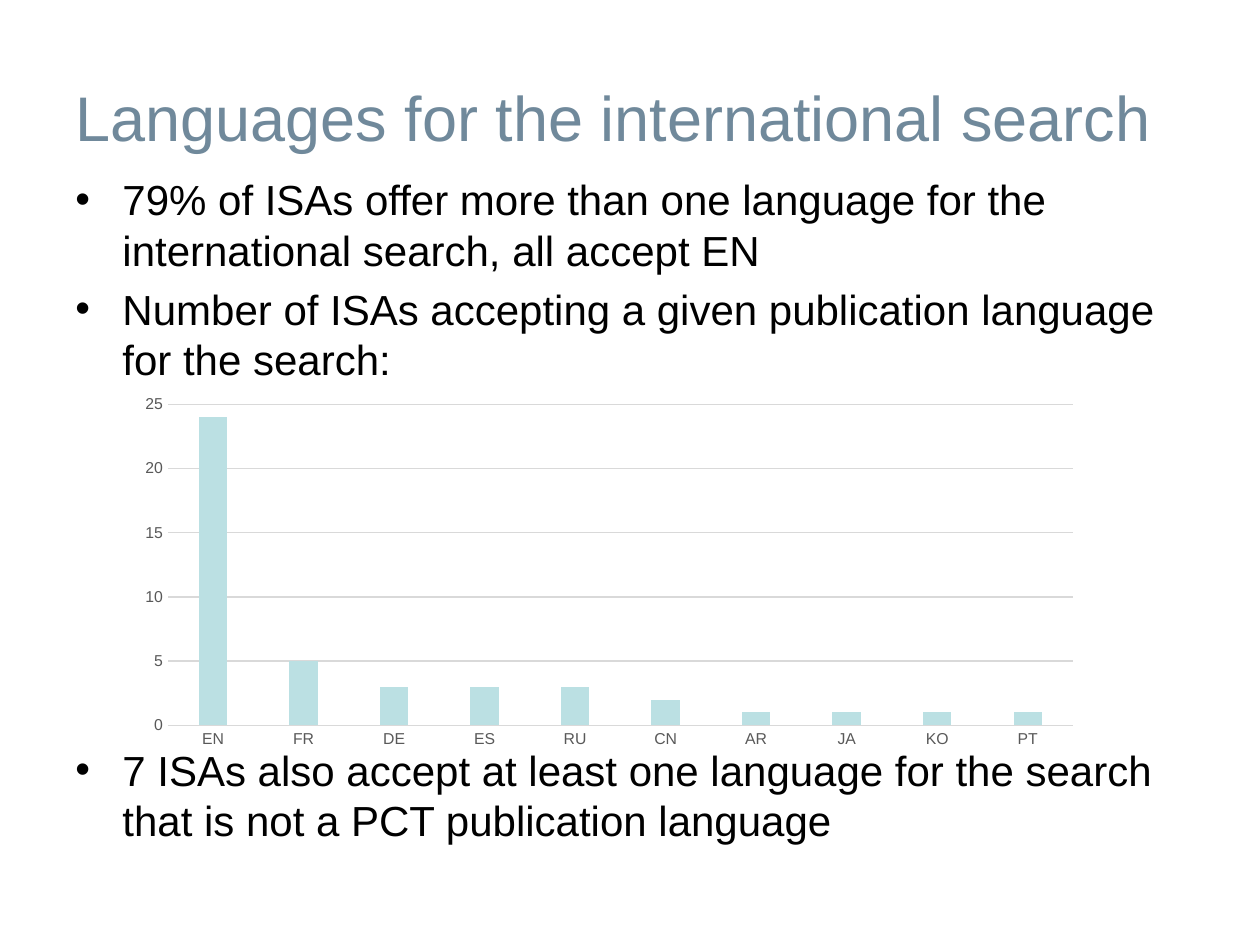
from dataclasses import dataclass

import pptx
import pptx.chart.data
import pptx.dml.color
import pptx.enum.chart
import pptx.enum.text
import pptx.oxml.ns
import pptx.util
from lxml import etree
from pptx.util import Cm, Pt

FONT = "Arial"
BLACK = "000000"
SLATE = "70899B"
AQUA = "BBE0E3"
AXIS_GREY = "595959"
GRID_GREY = "D9D9D9"


@dataclass(frozen=True)
class BulletBlock:
    top: float
    height: float
    points: tuple[str, ...]


BLOCKS = (
    BulletBlock(3.38, 4.17, (
        "79% of ISAs offer more than one language for the international search, all accept EN",
        "Number of ISAs accepting a given publication language for the search:",
    )),
    BulletBlock(14.88, 2.3, (
        "7 ISAs also accept at least one language for the search that is not a PCT publication language",
    )),
)

ISAS_BY_LANGUAGE = {
    "EN": 24, "FR": 5, "DE": 3, "ES": 3, "RU": 3,
    "CN": 2, "AR": 1, "JA": 1, "KO": 1, "PT": 1,
}


def colour(value: str) -> pptx.dml.color.RGBColor:
    return pptx.dml.color.RGBColor.from_string(value)


def style_font(font, size: float, value: str) -> None:
    font.name = FONT
    font.size = Pt(size)
    font.color.rgb = colour(value)


def style_line(line, value: str) -> None:
    line.color.rgb = colour(value)
    line.width = Pt(0.75)


def add_bullet(paragraph) -> None:
    properties = paragraph._p.get_or_add_pPr()
    properties.set("marL", str(Cm(0.95)))
    properties.set("indent", str(-Cm(0.95)))
    bullet_font = etree.SubElement(properties, pptx.oxml.ns.qn("a:buFont"))
    bullet_font.set("typeface", FONT)
    bullet = etree.SubElement(properties, pptx.oxml.ns.qn("a:buChar"))
    bullet.set("char", "•")


def draw_heading(slide) -> None:
    heading = slide.shapes.title
    heading.left, heading.top = Cm(1.27), Cm(0.76)
    heading.width, heading.height = Cm(23.5), Cm(3.18)
    frame = heading.text_frame
    frame.auto_size = pptx.enum.text.MSO_AUTO_SIZE.NONE
    frame.vertical_anchor = pptx.enum.text.MSO_ANCHOR.MIDDLE
    paragraph = frame.paragraphs[0]
    paragraph.alignment = pptx.enum.text.PP_ALIGN.LEFT
    run = paragraph.add_run()
    run.text = "Languages for the international search"
    style_font(run.font, 36, SLATE)


def draw_bullets(slide, block: BulletBlock) -> None:
    frame = slide.shapes.add_textbox(
        Cm(1.27), Cm(block.top), Cm(23.29), Cm(block.height)
    ).text_frame
    frame.word_wrap = True
    for index, point in enumerate(block.points):
        paragraph = frame.add_paragraph() if index else frame.paragraphs[0]
        add_bullet(paragraph)
        if index:
            paragraph.space_before = Pt(4.8)
        run = paragraph.add_run()
        run.text = point
        style_font(run.font, 24, BLACK)


def draw_language_chart(slide) -> None:
    data = pptx.chart.data.CategoryChartData()
    data.categories = list(ISAS_BY_LANGUAGE)
    data.add_series("Series 1", list(ISAS_BY_LANGUAGE.values()))
    chart = slide.shapes.add_chart(
        pptx.enum.chart.XL_CHART_TYPE.COLUMN_CLUSTERED,
        Cm(2.54), Cm(7.82), Cm(19.48), Cm(7.42), data,
    ).chart
    chart.has_title = False
    chart.has_legend = False
    style_font(chart.font, 10, BLACK)

    plot = chart.plots[0]
    plot.vary_by_categories = False
    plot.gap_width = 219
    plot.overlap = -27
    columns = plot.series[0].format.fill
    columns.solid()
    columns.fore_color.rgb = colour(AQUA)

    languages, counts = chart.category_axis, chart.value_axis
    for axis in (languages, counts):
        axis.major_tick_mark = pptx.enum.chart.XL_TICK_MARK.NONE
        axis.minor_tick_mark = pptx.enum.chart.XL_TICK_MARK.NONE
        style_font(axis.tick_labels.font, 9, AXIS_GREY)
    style_line(languages.format.line, GRID_GREY)
    counts.format.line.fill.background()
    counts.minimum_scale, counts.maximum_scale = 0, 25
    counts.major_unit = 5
    counts.has_major_gridlines = True
    style_line(counts.major_gridlines.format.line, GRID_GREY)


def main() -> None:
    deck = pptx.Presentation()
    deck.slide_width, deck.slide_height = Cm(25.4), Cm(19.05)
    slide = deck.slides.add_slide(deck.slide_layouts.get_by_name("Title Only"))
    draw_heading(slide)
    for block in BLOCKS:
        draw_bullets(slide, block)
    draw_language_chart(slide)
    deck.save("out.pptx")


if __name__ == "__main__":
    main()
